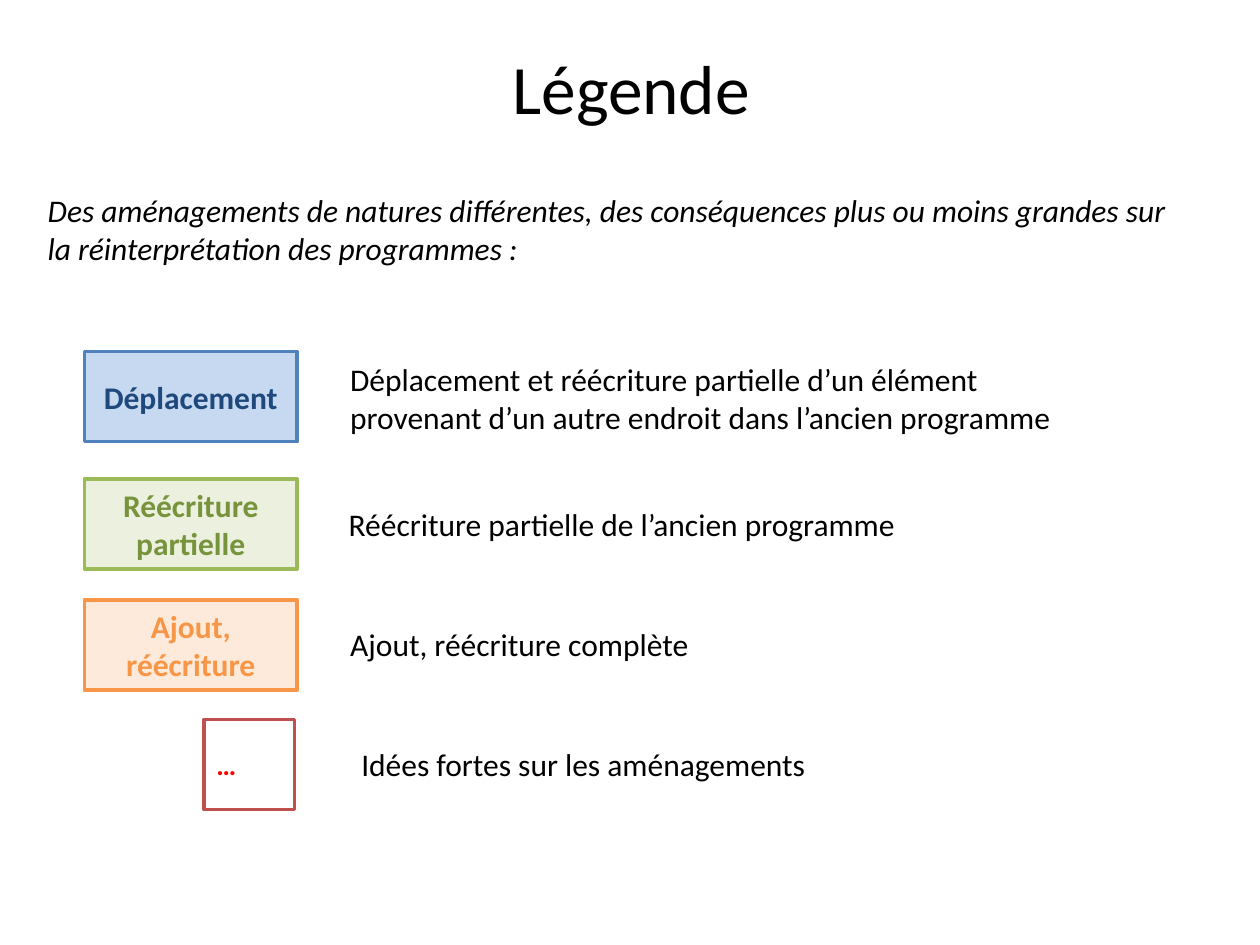
"""Build the legend slide: coloured keys with their explanations."""
from pptx import Presentation
from pptx.dml.color import RGBColor
from pptx.enum import shapes, text
from pptx.util import Pt


def color(value):
    return RGBColor.from_string(value)


def write(shape, words, size, ink, align, bold=False, italic=False):
    frame = shape.text_frame
    frame.text = words
    para = frame.paragraphs[0]
    para.alignment = align
    font = para.runs[0].font
    font.name, font.size, font.bold, font.italic = "Calibri", Pt(size), bold, italic
    font.color.rgb = color(ink)


LEFT, CENTER = text.PP_ALIGN.LEFT, text.PP_ALIGN.CENTER

deck = Presentation()
deck.slide_width, deck.slide_height = Pt(720), Pt(540)
page = deck.slides.add_slide(deck.slide_layouts[5])

title = page.shapes.title
title.left, title.top, title.width, title.height = Pt(36.7), Pt(20.9), Pt(648), Pt(56.9)
write(title, "Légende", 39.6, "000000", CENTER)
title.text_frame.vertical_anchor = text.MSO_ANCHOR.MIDDLE

keys = [
    ("Déplacement", 48.2, 200.9, 121.7, "C6D9F1", "4F81BD", "1F497D", 18, CENTER),
    ("Réécriture partielle", 48.2, 273.6, 121.7, "EBF1DE", "9BBB59", "77933C", 18, CENTER),
    ("Ajout, réécriture", 48.2, 342.7, 121.7, "FDEADA", "F79646", "F79646", 18, CENTER),
    ("…", 116.6, 411.1, 51.8, "FFFFFF", "C0504D", "FF0000", 16, LEFT),
]
for words, left, top, width, fill, line, ink, size, align in keys:
    key = page.shapes.add_shape(
        shapes.MSO_SHAPE.RECTANGLE, Pt(left), Pt(top), Pt(width), Pt(51.5))
    key.shadow.inherit = False
    key.fill.solid()
    key.fill.fore_color.rgb = color(fill)
    key.line.color.rgb = color(line)
    key.line.width = Pt(2)
    key.text_frame.vertical_anchor = text.MSO_ANCHOR.MIDDLE
    write(key, words, size, ink, align, bold=True)

notes = [
    ("Des aménagements de natures différentes, des conséquences plus ou moins grandes"
     " sur la réinterprétation des programmes :", 20.2, 105.8, 657.4, 51, True, True),
    ("Déplacement et réécriture partielle d’un élément provenant d’un autre endroit"
     " dans l’ancien programme", 193, 202.3, 432, 51, True, False),
    ("Réécriture partielle de l’ancien programme", 192.2, 285.1, 334.8, 29, False, False),
    ("Ajout, réécriture complète", 193, 353.5, 210.2, 29, False, False),
    ("Idées fortes sur les aménagements", 199.4, 421.9, 271.4, 29, False, False),
]
for words, left, top, width, height, wrap, italic in notes:
    note = page.shapes.add_textbox(Pt(left), Pt(top), Pt(width), Pt(height))
    note.text_frame.word_wrap = wrap
    note.text_frame.auto_size = text.MSO_AUTO_SIZE.SHAPE_TO_FIT_TEXT
    write(note, words, 18, "000000", LEFT, italic=italic)

deck.save("out.pptx")
